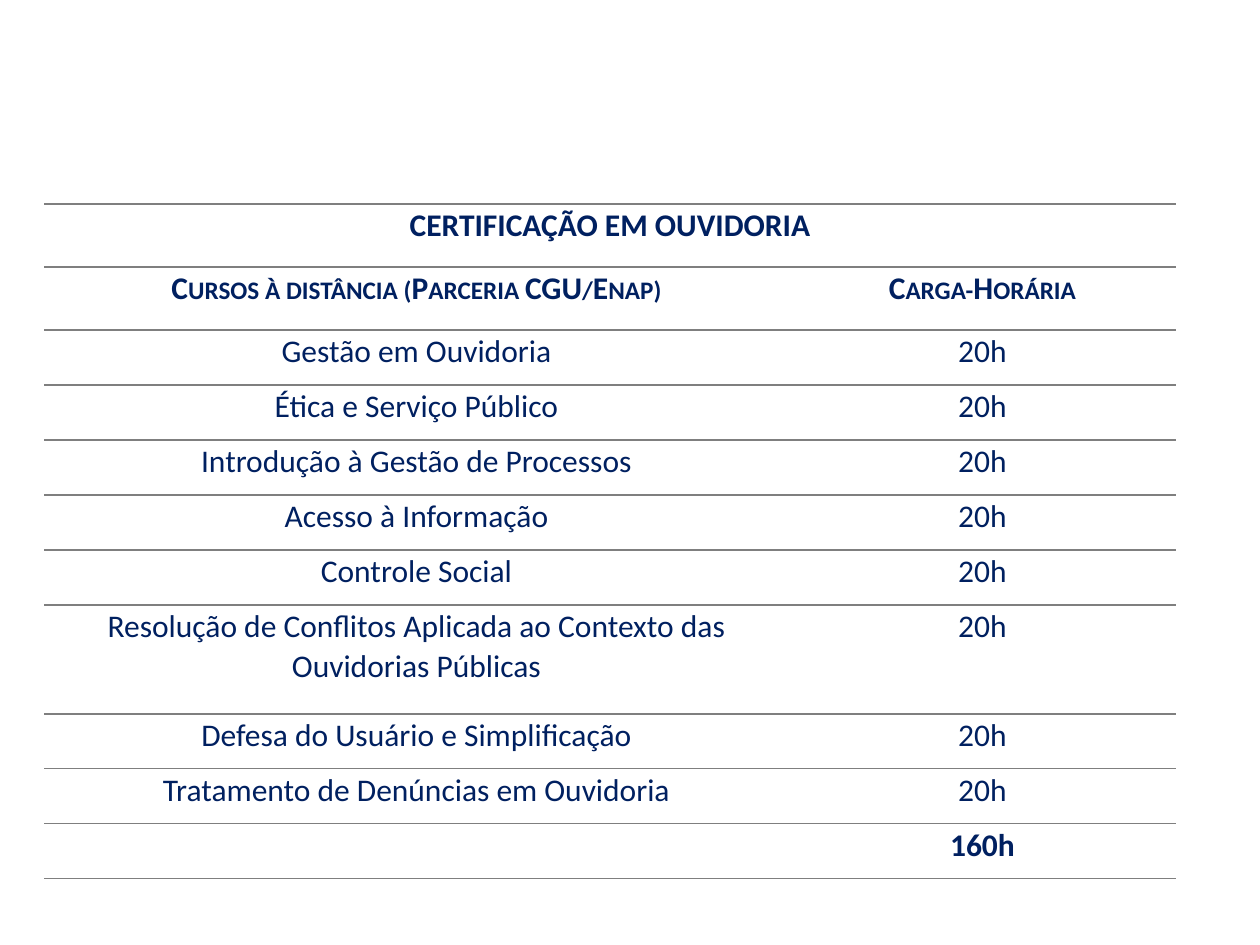
from lxml.etree import SubElement as Sub
from pptx import Presentation
from pptx.dml.color import RGBColor
from pptx.enum.text import PP_ALIGN as Align
from pptx.oxml.ns import qn
from pptx.util import Pt

NAVY = RGBColor(0x00, 0x20, 0x60)
GRAY = RGBColor(0x7F, 0x7F, 0x7F)
TITLE = "CERTIFICAÇÃO EM OUVIDORIA"
HEADS = ("Cursos à distância (Parceria CGU/Enap)", "Carga-Horária")
HOURS = "20h"
TOTAL = "160h"
COURSES = (
    "Gestão em Ouvidoria",
    "Ética e Serviço Público",
    "Introdução à Gestão de Processos",
    "Acesso à Informação",
    "Controle Social",
    "Resolução de Conflitos Aplicada ao Contexto das Ouvidorias Públicas",
    "Defesa do Usuário e Simplificação",
    "Tratamento de Denúncias em Ouvidoria",
)
HEAD_H, ROW_H, TALL_H = 63, 55, 109
LONG = 50
FONT = {"name": "Calibri", "size": Pt(18)}
INSET = {"margin_left": 9, "margin_right": 9, "margin_top": 0, "margin_bottom": 0}


def px(n):
    """Turn pixels into EMU."""
    return round(n * 914400 / 126)


def rule(cell):
    """Clear the cell's fill and sides, and draw its top and bottom lines."""
    props = cell._tc.get_or_add_tcPr()
    for side in ("lnL", "lnR", "lnT", "lnB"):
        line = Sub(props, qn(f"a:{side}"), w=str(Pt(1)))
        if side in ("lnT", "lnB"):
            fill = Sub(line, qn("a:solidFill"))
            Sub(fill, qn("a:srgbClr"), val=str(GRAY))
        else:
            Sub(line, qn("a:noFill"))
    cell.fill.background()


def write(cell, text, bold=False, small=False, space=1.07):
    """Put centred text into a cell."""
    for name, size in INSET.items():
        setattr(cell, name, px(size))
    para = cell.text_frame.paragraphs[0]
    para.alignment = Align.CENTER
    para.line_spacing = space
    run = para.add_run()
    run.text = text
    for name, value in {**FONT, "bold": bold}.items():
        setattr(run.font, name, value)
    run.font.color.rgb = NAVY
    if small:
        run._r.get_or_add_rPr().set("cap", "small")


def grid(slide, left, top, width):
    """Build the course table at the given place."""
    tall = [TALL_H if len(name) > LONG else ROW_H for name in COURSES]
    highs = [HEAD_H, HEAD_H, *tall, ROW_H]
    hour_w = 387
    box = [px(n) for n in (left, top, width, sum(highs))]
    table = slide.shapes.add_table(len(highs), 2, *box).table
    table.first_row = table.horz_banding = False
    for col, size in zip(table.columns, (width - hour_w, hour_w)):
        col.width = px(size)
    for row, size in zip(table.rows, highs):
        row.height = px(size)
        for cell in row.cells:
            rule(cell)

    table.cell(0, 0).merge(table.cell(0, 1))
    write(table.cell(0, 0), TITLE, bold=True)
    for i, head in enumerate(HEADS):
        write(table.cell(1, i), head, bold=True, small=True)
    for i, name in enumerate(COURSES, 2):
        write(table.cell(i, 0), name, space=1.06)
        write(table.cell(i, 1), HOURS)
    write(table.cell(len(highs) - 1, 1), TOTAL, bold=True)


def main():
    """Build and save the slide."""
    deck = Presentation()
    deck.slide_width, deck.slide_height = px(1260), px(945)
    slide = deck.slides.add_slide(deck.slide_layouts[6])
    grid(slide, 44, 204, 1132)
    deck.save("out.pptx")


if __name__ == "__main__":
    main()
